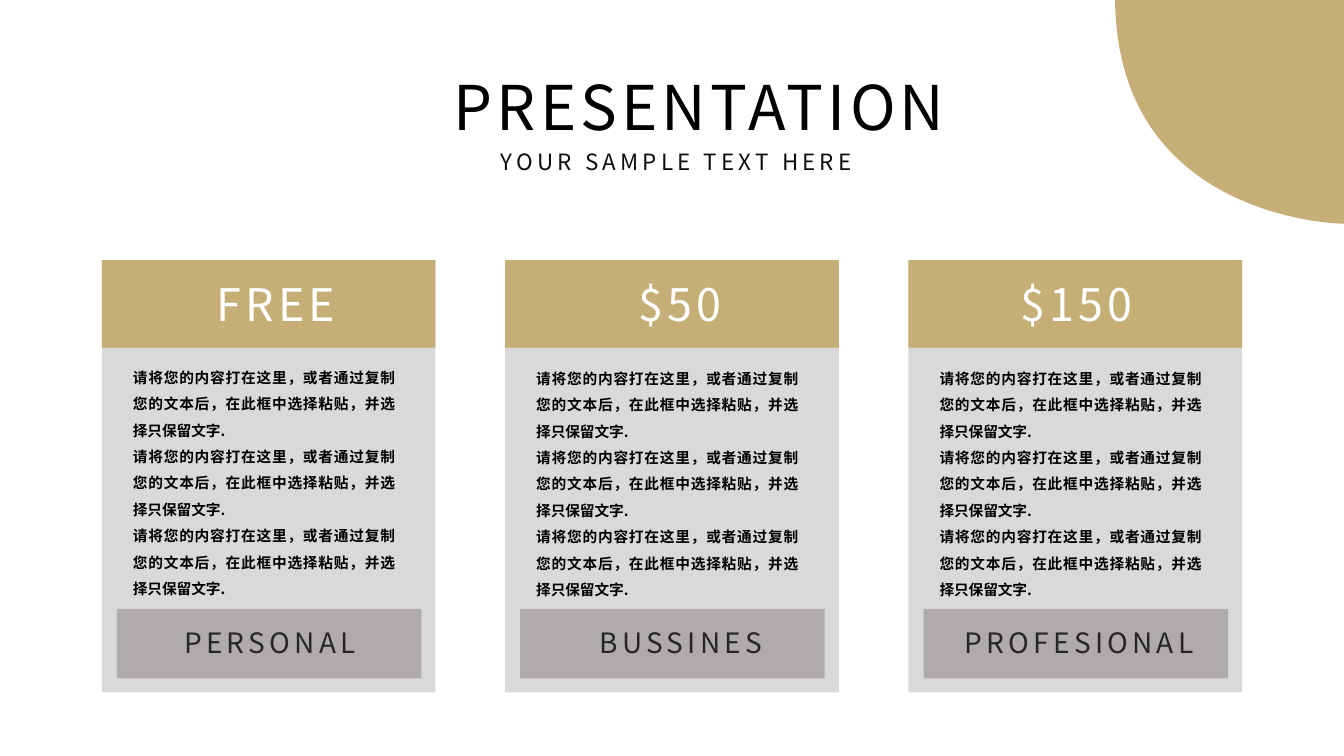
from lxml import etree
from pptx import Presentation
from pptx.dml.color import RGBColor
from pptx.enum.shapes import MSO_SHAPE
from pptx.enum.text import MSO_AUTO_SIZE, PP_ALIGN
from pptx.oxml.ns import qn
from pptx.util import Inches, Pt

RECT = MSO_SHAPE.RECTANGLE
GROW = MSO_AUTO_SIZE.SHAPE_TO_FIT_TEXT
JUSTIFY = PP_ALIGN.JUSTIFY

FONT = "Noto Sans CJK SC"
GOLD, LIGHT, GREY = "C5AF76", "D9D9D9", "AFABAB"
WHITE, BLACK, DARK, NEAR_BLACK = "FFFFFF", "000000", "262626", "0D0D0D"

BODY = "请将您的内容打在这里，或者通过复制您的文本后，在此框中选择粘贴，并选择只保留文字."
CARD_LEFT, CARD_STEP = 1.01, 4
# price, its left and width; plan, its left and width; top and height of body text
PLANS = [
    ("FREE", 2.05, 1.4, "PERSONAL", 1.73, 2.01, 3.52, 2.75),
    ("$50", 6.23, 1.12, "BUSSINES", 5.85, 1.87, 3.53, 2.49),
    ("$150", 10.02, 1.42, "PROFESIONAL", 9.47, 2.59, 3.53, 2.49),
]


def rgb(value):
    return RGBColor.from_string(value)


def paint(sp, color):
    sp.shadow.inherit = False
    sp.fill.solid()
    sp.fill.fore_color.rgb = rgb(color)
    sp.line.fill.background()


def add_rect(s, x, y, w, h, color):
    paint(s.shapes.add_shape(RECT, Inches(x), Inches(y), Inches(w), Inches(h)), color)


def add_run(p, text, size, color, bold=False, spacing=0):
    r = p.add_run()
    r.text = text
    r.font.name = FONT
    r.font.size = Pt(size)
    r.font.bold = bold
    r.font.color.rgb = rgb(color)
    props = r.font._element
    etree.SubElement(props, qn("a:ea")).set("typeface", FONT)
    if spacing:
        props.set("spc", str(spacing * 100))


def add_box(s, x, y, w, h, wrap):
    tf = s.shapes.add_textbox(Inches(x), Inches(y), Inches(w), Inches(h)).text_frame
    tf.word_wrap = wrap
    tf.auto_size = GROW
    return tf


def add_label(s, x, y, w, h, text, size, color):
    tf = add_box(s, x, y, w, h, False)
    add_run(tf.paragraphs[0], text, size, color, spacing=3)


def add_body(s, x, y, w, h):
    tf = add_box(s, x, y, w, h, True)
    for i in range(3):
        p = tf.add_paragraph() if i else tf.paragraphs[0]
        p.alignment = JUSTIFY
        p.line_spacing = 1.5
        add_run(p, BODY, 10.5, BLACK, bold=True)


def add_card(s, x, plan):
    price, price_x, price_w, name, name_x, name_w, body_y, body_h = plan
    add_rect(s, x, 2.58, 3.31, 4.29, LIGHT)
    add_rect(s, x, 2.58, 3.31, 0.87, GOLD)
    add_rect(s, x + 0.15, 6.04, 3.02, 0.69, GREY)
    add_label(s, price_x, 2.7, price_w, 0.64, price, 32, WHITE)
    add_label(s, name_x, 6.16, name_w, 0.44, name, 20, DARK)
    add_body(s, x + 0.21, body_y, 2.8, body_h)


def bezier(points, steps=60):
    """Points along a cubic curve."""
    for i in range(steps + 1):
        t = i / steps
        weights = ((1 - t) ** 3, 3 * t * (1 - t) ** 2, 3 * t ** 2 * (1 - t), t ** 3)
        yield tuple(Inches(sum(k * pt[axis] for k, pt in zip(weights, points)))
                    for axis in (0, 1))


def add_corner(s):
    left, top, right, bottom = 11.06, -0.03, 13.33, 2.22
    curve = list(bezier([(right, bottom), (right, bottom), (left, 2.2), (left, top)]))
    builder = s.shapes.build_freeform(*curve[0], scale=1.0)
    builder.add_line_segments(curve[1:] + [(Inches(right), Inches(top))], close=True)
    paint(builder.convert_to_shape(), GOLD)


def main():
    prs = Presentation()
    prs.slide_width, prs.slide_height = Inches(13.33), Inches(7.5)
    s = prs.slides.add_slide(prs.slide_layouts[6])

    # Price cards
    for i, plan in enumerate(PLANS):
        add_card(s, CARD_LEFT + i * CARD_STEP, plan)

    # Heading
    add_label(s, 4.4, 0.63, 5.25, 0.84, "PRESENTATION", 44, BLACK)
    add_label(s, 4.87, 1.42, 3.89, 0.37, "YOUR SAMPLE TEXT HERE", 16, NEAR_BLACK)

    # Corner decoration
    add_corner(s)
    prs.save("out.pptx")


if __name__ == "__main__":
    main()
